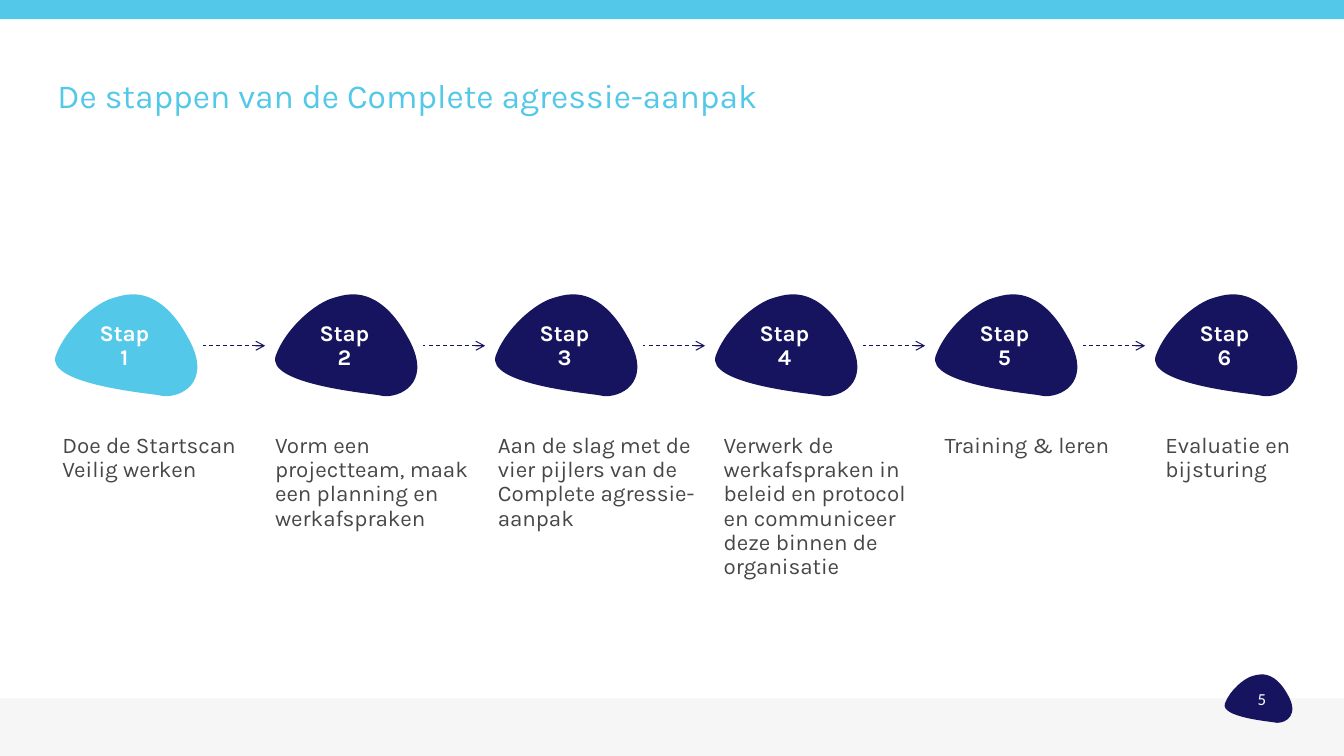
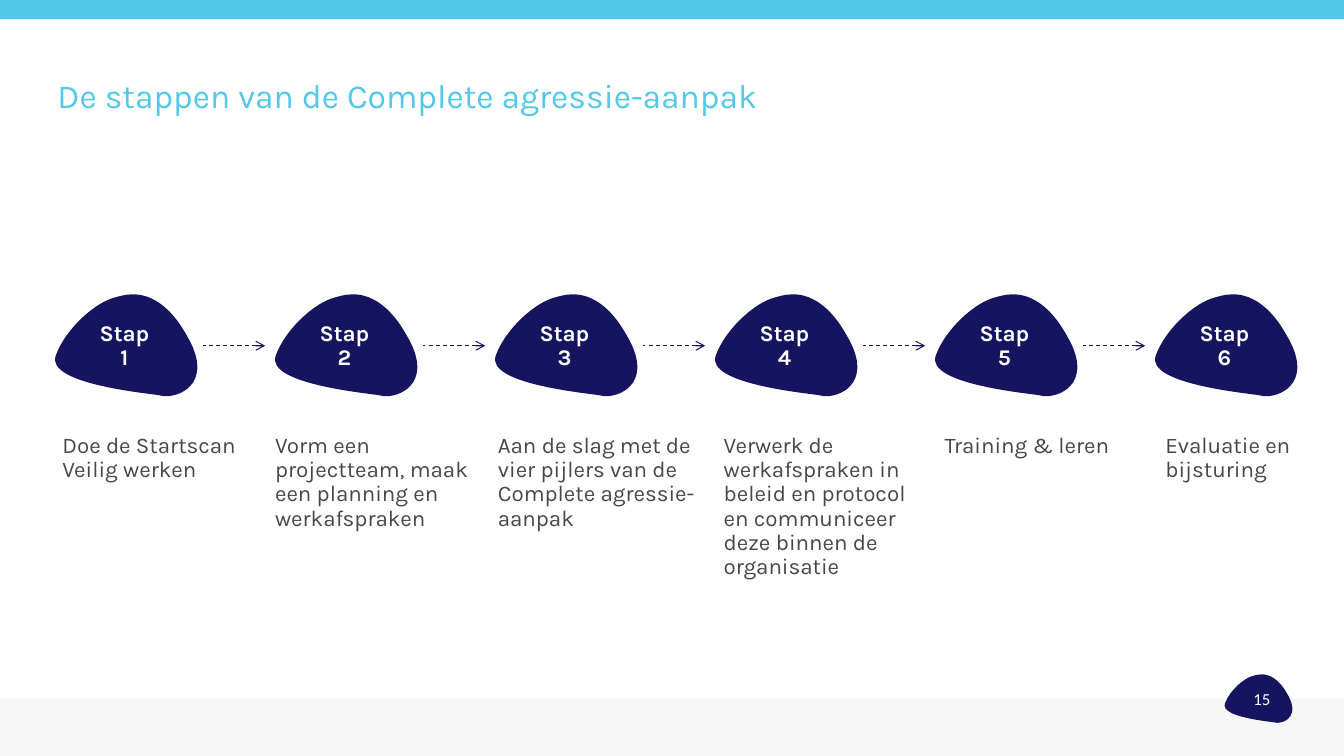
from itertools import chain

from lxml import etree
from pptx import Presentation
from pptx.dml.color import RGBColor
from pptx.enum.dml import MSO_LINE
from pptx.enum.shapes import MSO_CONNECTOR, MSO_SHAPE
from pptx.enum.text import MSO_ANCHOR, MSO_AUTO_SIZE, PP_ALIGN
from pptx.oxml.ns import qn
from pptx.util import Pt

DASH = MSO_LINE.DASH
STRAIGHT = MSO_CONNECTOR.STRAIGHT
RECTANGLE = MSO_SHAPE.RECTANGLE
TOP, MIDDLE = MSO_ANCHOR.TOP, MSO_ANCHOR.MIDDLE
GROW = MSO_AUTO_SIZE.SHAPE_TO_FIT_TEXT
LEFT, CENTER = PP_ALIGN.LEFT, PP_ALIGN.CENTER

EMU_PER_PX = 9144
SLIDE_WIDTH, SLIDE_HEIGHT = 1333, 750

SKY, NAVY, GREY, PALE, WHITE = "54C8E8", "16145F", "464749", "F4F4F4", "FFFFFF"
TITLE_FONT = BODY_FONT = "Karla"
NUMBER_FONT = "Calibri"

PEBBLE_UNITS = 1655
PEBBLE_START = (865, 0)
PEBBLE_CURVES = [
    ((790, 0), (728, 20), (673, 36)),
    ((508, 80), (207, 322), (103, 607)),
    ((0, 892), (1036, 980), (1133, 1000)),
    ((1153, 1004), (1170, 1008), (1188, 1008)),
    ((1380, 1008), (1655, 840), (1400, 410)),
    ((1217, 80), (1016, 0), (865, 0)),
]

STEP_LEFT, STEP_TOP, STEP_WIDTH, STEP_PITCH = 45, 292, 166, 218.2
ARROW_OFFSET, ARROW_LENGTH, ARROW_TOP = 156, 62, 343
DESCRIPTION_TOP, DESCRIPTION_WIDTH = 426, 226

TITLE = "De stappen van de Complete agressie-aanpak"
DESCRIPTIONS = [
    (52, 59, "Doe de Startscan Veilig werken"),
    (263, 107, "Vorm een projectteam, maak een planning en werkafspraken"),
    (484, 107, "Aan de slag met de vier pijlers van de Complete agressie-aanpak"),
    (708, 156, "Verwerk de werkafspraken in beleid en protocol en communiceer "
               "deze binnen de organisatie"),
    (927, 34, "Training & leren"),
    (1146, 59, "Evaluatie en bijsturing"),
]
PAGES = [("5", 1), ("15", None)]


def px(value):
    return round(value * EMU_PER_PX)


def color(value):
    return RGBColor.from_string(value)


def write_text(shape, text, *, size, ink, font=BODY_FONT, bold=False, align=LEFT,
               anchor=TOP, spacing=0.9, after=0, margins=(0, 0, 0, 0)):
    frame = shape.text_frame
    frame.word_wrap = True
    frame.vertical_anchor = anchor
    (frame.margin_left, frame.margin_top,
     frame.margin_right, frame.margin_bottom) = map(px, margins)
    frame.text = text
    for paragraph in frame.paragraphs:
        paragraph.alignment = align
        paragraph.line_spacing = spacing
        paragraph.space_after = Pt(after)
        paragraph.font.name = font
        paragraph.font.size = Pt(size)
        paragraph.font.bold = bold
        paragraph.font.color.rgb = color(ink)


def paint(shape, fill):
    shape.shadow.inherit = False
    shape.fill.solid()
    shape.fill.fore_color.rgb = color(fill)
    shape.line.fill.background()


def add_text(slide, left, top, width, height, text, **text_format):
    shape = slide.shapes.add_textbox(px(left), px(top), px(width), px(height))
    write_text(shape, text, **text_format)
    return shape


def add_band(slide, top, height, fill, opacity=100):
    band = slide.shapes.add_shape(RECTANGLE, 0, px(top), px(SLIDE_WIDTH), px(height))
    paint(band, fill)
    if opacity < 100:
        tint = band.fill._xPr.find(qn("a:solidFill"))[0]
        etree.SubElement(tint, qn("a:alpha"), val=str(opacity * 1000))


def bend_lines(shape):
    lines = list(shape._element.iter(qn("a:lnTo")))
    for first, second, end in zip(lines[::3], lines[1::3], lines[2::3]):
        curve = etree.Element(qn("a:cubicBezTo"))
        first.addprevious(curve)
        for line in (first, second, end):
            curve.append(line[0])
            line.getparent().remove(line)


def add_pebble(slide, left, top, width, fill, text, **text_format):
    zoom = width / PEBBLE_UNITS
    points = [(px(left + x * zoom), px(top + y * zoom))
              for x, y in chain([PEBBLE_START], *PEBBLE_CURVES)]
    builder = slide.shapes.build_freeform(*points[0])
    builder.add_line_segments(points[1:], close=True)
    pebble = builder.convert_to_shape()
    bend_lines(pebble)
    paint(pebble, fill)
    write_text(pebble, text, ink=WHITE, align=CENTER, anchor=MIDDLE, **text_format)


def add_arrow(slide, left, top, length):
    arrow = slide.shapes.add_connector(
        STRAIGHT, px(left + length), px(top), px(left), px(top))
    arrow.line.color.rgb = color(NAVY)
    arrow.line.width = Pt(0.75)
    arrow.line.dash_style = DASH
    etree.SubElement(arrow.line._get_or_add_ln(), qn("a:headEnd"), type="arrow")
    etree.SubElement(arrow._element.spPr, qn("a:effectLst"))


def add_frame(slide, page_number):
    add_band(slide, 693, 57, PALE, opacity=80)
    add_pebble(slide, 1210, 669, 79, NAVY, page_number, size=12,
               font=NUMBER_FONT, spacing=1.0, margins=(4, 0, 0, 0))
    add_band(slide, 0, 19, SKY)
    add_text(slide, 57, 56, 1217, 81, TITLE, size=24, ink=SKY, font=TITLE_FONT,
             anchor=MIDDLE)


def add_steps(slide, current_step):
    for step, (text_left, text_height, description) in enumerate(DESCRIPTIONS, 1):
        left = STEP_LEFT + (step - 1) * STEP_PITCH
        add_pebble(slide, left, STEP_TOP, STEP_WIDTH,
                   SKY if step == current_step else NAVY,
                   f"Stap\n{step}", size=16, bold=True, margins=(0, 2, 9, 0))
        if step < len(DESCRIPTIONS):
            add_arrow(slide, left + ARROW_OFFSET, ARROW_TOP, ARROW_LENGTH)
        box = add_text(slide, text_left, DESCRIPTION_TOP, DESCRIPTION_WIDTH,
                       text_height, description, size=16, ink=GREY, after=3,
                       margins=(10, 5, 10, 5))
        box.text_frame.auto_size = GROW


def main():
    presentation = Presentation()
    presentation.slide_width = px(SLIDE_WIDTH)
    presentation.slide_height = px(SLIDE_HEIGHT)
    blank = presentation.slide_layouts[6]
    for page_number, current_step in PAGES:
        slide = presentation.slides.add_slide(blank)
        add_frame(slide, page_number)
        add_steps(slide, current_step)
    presentation.save("out.pptx")


if __name__ == "__main__":
    main()
